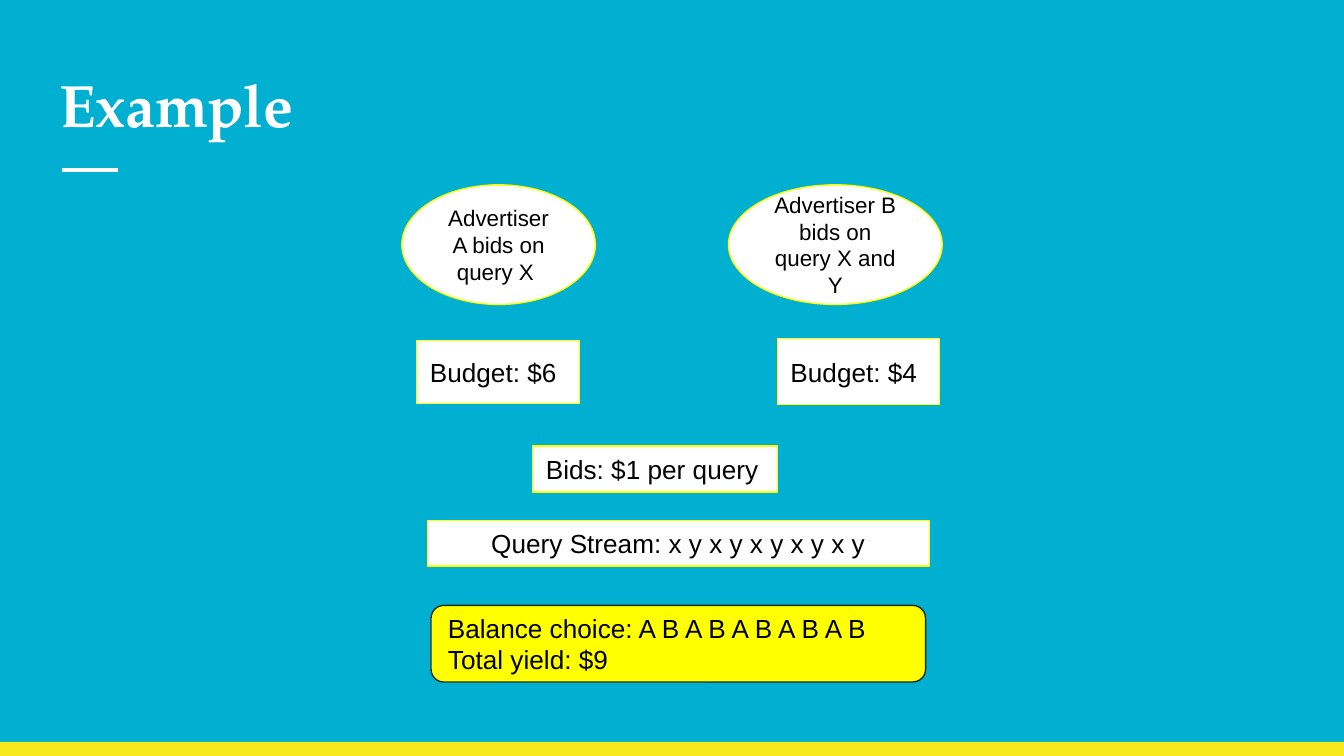
from lxml.etree import SubElement
from pptx import Presentation
from pptx.dml.color import RGBColor
from pptx.enum.shapes import MSO_CONNECTOR, MSO_SHAPE
from pptx.enum.text import MSO_ANCHOR, PP_ALIGN
from pptx.oxml.ns import qn
from pptx.util import Inches, Pt

COLUMNS, ROWS = 100, 56.25
CELL = Inches(10) / COLUMNS
BACKGROUND, WHITE, BLACK = "01AFD1", "FFFFFF", "000000"
YELLOW, BAND, INK = "FFFF00", "F8E71C", "1E2D31"

TITLE = "Example"
TITLE_AREA = (3.4, 4.05, 93.2, 7.1)
RULE = (4.6, 12.65, 8.8, 12.65)
FOOTER_AREA = (0, 55.2, COLUMNS, 1.05)

FRAME = dict(word_wrap=True, margin_left=Inches(0.1), margin_top=Inches(0.1),
             margin_right=Inches(0.1), margin_bottom=Inches(0.1))
STYLES = {
    "advertiser": dict(outline=MSO_SHAPE.OVAL, fill=WHITE, line=YELLOW, size=12, align=PP_ALIGN.CENTER),
    "fact": dict(outline=MSO_SHAPE.RECTANGLE, fill=WHITE, line=YELLOW, size=14, align=PP_ALIGN.LEFT),
    "stream": dict(outline=MSO_SHAPE.RECTANGLE, fill=WHITE, line=YELLOW, size=14, align=PP_ALIGN.CENTER),
    "result": dict(outline=MSO_SHAPE.FLOWCHART_ALTERNATE_PROCESS, fill=YELLOW, line=INK, size=14,
                   align=PP_ALIGN.LEFT),
}
STEPS = [
    ("advertiser", (29.9, 13.75, 14.4, 8.9), ["Advertiser A bids on query X "]),
    ("advertiser", (54.2, 13.75, 15.9, 8.9), ["Advertiser B bids on query X and Y"]),
    ("fact", (31, 25.35, 12.1, 4.7), ["Budget: $6"]),
    ("fact", (57.83, 25.2, 12.1, 4.9), ["Budget: $4"]),
    ("fact", (39.63, 33.2, 18.2, 3.4), ["Bids: $1 per query"]),
    ("stream", (31.8, 38.72, 37.35, 3.4), ["Query Stream: x y x y x y x y x y"]),
    ("result", (32.07, 45.05, 36.8, 5.7),
     ["Balance choice: A B A B A B A B A B", "Total yield: $9"]),
]


def color(value):
    return RGBColor.from_string(value)


def on_grid(area):
    return [round(cells * CELL) for cells in area]


def apply(target, values):
    for name, value in values.items():
        setattr(target, name, value)


def write(frame, lines, align, anchor, font, ink):
    apply(frame, dict(FRAME, vertical_anchor=anchor))
    frame.text = "\n".join(lines)
    for paragraph in frame.paragraphs:
        paragraph.alignment = align
        for run in paragraph.runs:
            apply(run.font, font)
            run.font.color.rgb = color(ink)


def add_block(slide, outline, area, fill, line=None):
    block = slide.shapes.add_shape(outline, *on_grid(area))
    block.shadow.inherit = False
    block.fill.solid()
    block.fill.fore_color.rgb = color(fill)
    if line:
        block.line.color.rgb = color(line)
        block.line.width = Pt(0.75)
    else:
        block.line.fill.background()
    return block


def main():
    deck = Presentation()
    apply(deck, dict(slide_width=round(COLUMNS * CELL), slide_height=round(ROWS * CELL)))
    slide = deck.slides.add_slide(deck.slide_layouts[5])
    slide.background.fill.solid()
    slide.background.fill.fore_color.rgb = color(BACKGROUND)

    add_block(slide, MSO_SHAPE.RECTANGLE, FOOTER_AREA, BAND)
    rule = slide.shapes.add_connector(MSO_CONNECTOR.STRAIGHT, *on_grid(RULE))
    rule.line.color.rgb = color(WHITE)
    rule.line.width = Pt(2.25)
    SubElement(rule._element.spPr, qn("a:effectLst"))

    title = slide.shapes.title
    apply(title, dict(zip(("left", "top", "width", "height"), on_grid(TITLE_AREA))))
    write(title.text_frame, [TITLE], PP_ALIGN.LEFT, MSO_ANCHOR.TOP,
          dict(name="TeX Gyre Pagella", size=Pt(32), bold=True), WHITE)

    for kind, area, lines in STEPS:
        style = STYLES[kind]
        step = add_block(slide, style["outline"], area, style["fill"], style["line"])
        write(step.text_frame, lines, style["align"], MSO_ANCHOR.MIDDLE,
              dict(name="Arial", size=Pt(style["size"])), BLACK)

    deck.save("out.pptx")


if __name__ == "__main__":
    main()
